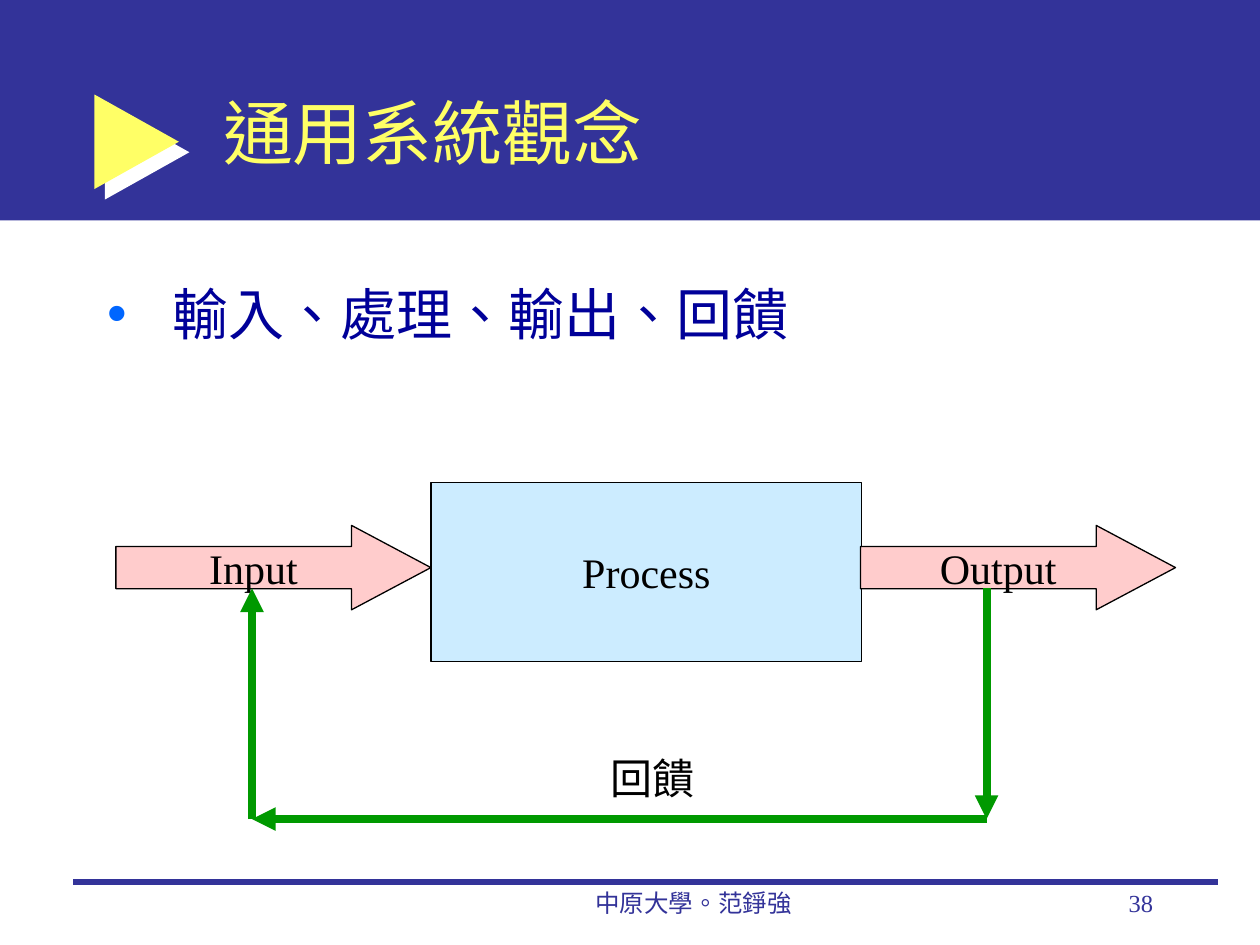
from dataclasses import dataclass
from typing import Optional

import lxml.etree
import pptx
import pptx.dml.color
import pptx.enum.shapes
import pptx.enum.text
import pptx.oxml
import pptx.oxml.ns
import pptx.util

Inches = pptx.util.Inches
Pt = pptx.util.Pt
RGBColor = pptx.dml.color.RGBColor
Shapes = pptx.enum.shapes.MSO_SHAPE
Align = pptx.enum.text.PP_ALIGN
Anchor = pptx.enum.text.MSO_ANCHOR
qn = pptx.oxml.ns.qn

NAVY = RGBColor(0x33, 0x33, 0x99)
YELLOW = RGBColor(0xFF, 0xFF, 0x66)
BODY_BLUE = RGBColor(0x00, 0x00, 0x99)
BULLET_BLUE = RGBColor(0x00, 0x66, 0xFF)
PALE_BLUE = RGBColor(0xCC, 0xEC, 0xFF)
PINK = RGBColor(0xFF, 0xCC, 0xCC)
GREEN = RGBColor(0x00, 0x99, 0x00)
BLACK = RGBColor(0x00, 0x00, 0x00)
WHITE = RGBColor(0xFF, 0xFF, 0xFF)

SERIF = "Times New Roman"
SANS = "Noto Sans CJK SC"


@dataclass
class Box:
    left: float
    top: float
    width: float
    height: float

    def lengths(self) -> tuple:
        return tuple(map(Inches, (self.left, self.top, self.width, self.height)))


@dataclass
class Block:
    box: Box
    kind: Shapes
    fill: RGBColor
    text: str = ""
    outline: Optional[RGBColor] = None
    adjustments: tuple = ()


@dataclass
class Label:
    box: Box
    text: str
    size: int
    color: RGBColor
    align: Align
    wrap: bool = True


def write_text(shape, text: str, size: int, color: RGBColor,
               align: Align = Align.LEFT, font: str = SERIF):
    paragraph = shape.text_frame.paragraphs[0]
    paragraph.text = text
    paragraph.alignment = align
    paragraph.font.size = Pt(size)
    paragraph.font.name = font
    paragraph.font.color.rgb = color
    defaults = paragraph._p.pPr.find(qn("a:defRPr"))
    defaults.set("lang", "zh-TW")
    east_asian = lxml.etree.Element(qn("a:ea"), typeface=SANS)
    defaults.find(qn("a:latin")).addnext(east_asian)


def add_block(slide, block: Block):
    shape = slide.shapes.add_shape(block.kind, *block.box.lengths())
    shape.shadow.inherit = False
    for index, value in enumerate(block.adjustments):
        shape.adjustments[index] = value
    shape.fill.solid()
    shape.fill.fore_color.rgb = block.fill
    if block.outline is None:
        shape.line.fill.background()
    else:
        shape.line.color.rgb = block.outline
        shape.line.width = Pt(0.75)
    if block.text:
        shape.text_frame.word_wrap = False
        shape.text_frame.vertical_anchor = Anchor.MIDDLE
        write_text(shape, block.text, 24, BLACK, Align.CENTER)
    return shape


def add_hard_shadow(shape, color: RGBColor) -> None:
    effects = shape._element.spPr.find(qn("a:effectLst"))
    shadow = lxml.etree.SubElement(
        effects, qn("a:outerShdw"), dist=str(Pt(8.5)), dir="2700000",
        algn="ctr", rotWithShape="0")
    lxml.etree.SubElement(shadow, qn("a:srgbClr"), val=str(color))


def add_label(slide, label: Label) -> None:
    text_box = slide.shapes.add_textbox(*label.box.lengths())
    text_box.text_frame.word_wrap = label.wrap
    write_text(text_box, label.text, label.size, label.color, label.align)


def add_line(slide, start: tuple, end: tuple, color: RGBColor,
             width: float, arrow: bool = False) -> None:
    connector = slide.shapes.add_connector(
        pptx.enum.shapes.MSO_CONNECTOR.STRAIGHT, *map(Inches, start + end))
    connector.line.color.rgb = color
    connector.line.width = Pt(width)
    if arrow:
        lxml.etree.SubElement(connector.line._get_or_add_ln(),
                              qn("a:tailEnd"), type="triangle")
    lxml.etree.SubElement(connector._element.spPr, qn("a:effectLst"))


def place(placeholder, box: Box) -> None:
    (placeholder.left, placeholder.top,
     placeholder.width, placeholder.height) = box.lengths()


def add_bullet(paragraph) -> None:
    properties = paragraph._p.get_or_add_pPr()
    properties.set("marL", str(Inches(0.52)))
    properties.set("indent", str(-Inches(0.52)))
    bullet_color = lxml.etree.SubElement(properties, qn("a:buClr"))
    lxml.etree.SubElement(bullet_color, qn("a:srgbClr"), val=str(BULLET_BLUE))
    lxml.etree.SubElement(properties, qn("a:buChar"), char="•")


def main() -> None:
    presentation = pptx.Presentation()
    presentation.slide_width = Inches(10)
    presentation.slide_height = Inches(7.5)
    slide = presentation.slides.add_slide(presentation.slide_layouts[1])
    title, body = slide.placeholders

    banner = add_block(slide, Block(Box(0, 0, 10, 1.75), Shapes.RECTANGLE, NAVY))
    marker = add_block(slide, Block(Box(0.75, 0.75, 0.67, 0.75), Shapes.RIGHT_ARROW,
                                    YELLOW, adjustments=(0.38, 1)))
    add_hard_shadow(marker, WHITE)
    for backdrop in (banner, marker):
        title._element.addprevious(backdrop._element)

    place(title, Box(1.67, 0.42, 7.58, 1.25))
    title.text_frame.vertical_anchor = Anchor.MIDDLE
    write_text(title, "通用系統觀念", 40, YELLOW, font=SANS)

    place(body, Box(0.75, 2.17, 8.5, 4.5))
    add_bullet(body.text_frame.paragraphs[0])
    write_text(body, "輸入、處理、輸出、回饋", 32, BODY_BLUE)
    body.text_frame.paragraphs[0].space_before = Pt(0)

    add_line(slide, (0.58, 7), (9.67, 7), NAVY, 3)

    add_block(slide, Block(Box(3.42, 3.83, 3.42, 1.42), Shapes.RECTANGLE,
                           PALE_BLUE, "Process", BLACK))
    for left, text in ((0.92, "Input"), (6.83, "Output")):
        add_block(slide, Block(Box(left, 4.17, 2.5, 0.67), Shapes.RIGHT_ARROW,
                               PINK, text, BLACK, (0.5, 0.94)))

    feedback_route = [(7.83, 4.67), (7.83, 6.5), (2, 6.5), (2, 4.67)]
    for start, end in zip(feedback_route, feedback_route[1:]):
        add_line(slide, start, end, GREEN, 4.5, arrow=True)

    labels = [
        Label(Box(4.75, 5.92, 0.87, 0.5), "回饋", 24, BLACK, Align.LEFT, wrap=False),
        Label(Box(3.92, 7, 3.17, 0.5), "中原大學。范錚強", 14, NAVY, Align.CENTER),
        Label(Box(7.17, 7, 2.08, 0.5), "38", 14, NAVY, Align.RIGHT),
    ]
    for label in labels:
        add_label(slide, label)

    presentation.save("out.pptx")


if __name__ == "__main__":
    main()
